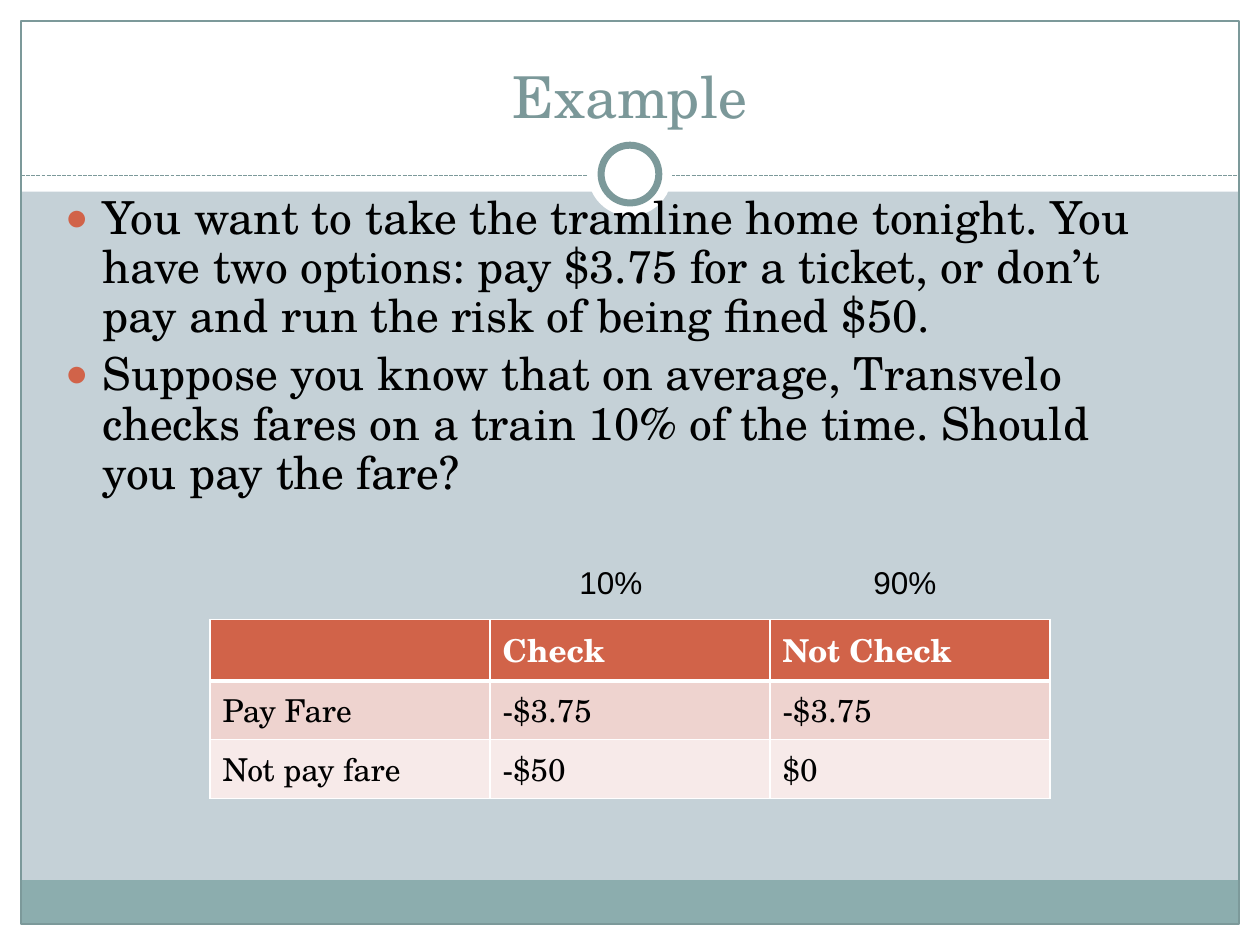
from lxml.etree import SubElement
from pptx import Presentation
from pptx.dml.color import RGBColor
from pptx.enum.dml import MSO_LINE
from pptx.enum.shapes import MSO_CONNECTOR, MSO_SHAPE
from pptx.enum.text import MSO_ANCHOR, MSO_AUTO_SIZE, PP_ALIGN
from pptx.oxml.ns import qn
from pptx.util import Pt

COLORS = {
    "background": "C5D1D7", "white": "FFFFFF", "black": "000000",
    "footer": "8CADAE", "frame": "7C999A", "title": "7B9899",
    "accent": "D16349", "band": "EED3CF", "light_band": "F7EAE9",
}
SERIF, SANS = "TeX Gyre Schola", "Arial"
WIDTH, HEIGHT, MARGIN = 720, 540, 12

BULLETS = [
    "You want to take the tramline home tonight. You have two options: "
    "pay $3.75 for a ticket, or don’t pay and run the risk of being fined $50.",
    "Suppose you know that on average, Transvelo checks fares on a train "
    "10% of the time. Should you pay the fare?",
]
PAYOFFS = [
    ["", "Check", "Not Check"],
    ["Pay Fare", "-$3.75", "-$3.75"],
    ["Not pay fare", "-$50", "$0"],
]


def color(name):
    return RGBColor.from_string(COLORS[name])


def write(paragraph, text, size=18, font=SERIF, ink="black", bold=False, align=None):
    paragraph.alignment = align
    run = paragraph.add_run()
    run.text = text
    run.font.size, run.font.name, run.font.bold = Pt(size), font, bold
    run.font.color.rgb = color(ink)


def add_panel(slide, box, fill=None, line=None, weight=0.75, kind=MSO_SHAPE.RECTANGLE):
    shape = slide.shapes.add_shape(kind, *map(Pt, box))
    shape.shadow.inherit = False
    if fill:
        shape.fill.solid()
        shape.fill.fore_color.rgb = color(fill)
    else:
        shape.fill.background()
    if line:
        shape.line.color.rgb = color(line)
        shape.line.width = Pt(weight)
    else:
        shape.line.fill.background()


def add_backdrop(slide, header_height):
    slide.background.fill.solid()
    slide.background.fill.fore_color.rgb = color("background")

    # White margins and header, footer band, frame
    inner_width = WIDTH - 2 * MARGIN
    for box in [
        (0, HEIGHT - MARGIN, WIDTH, MARGIN),
        (0, 0, WIDTH, header_height),
        (0, 0, MARGIN, HEIGHT),
        (WIDTH - MARGIN, 0, MARGIN, HEIGHT),
    ]:
        add_panel(slide, box, fill="white")
    add_panel(slide, (MARGIN, 503, inner_width, 25), fill="footer")
    add_panel(slide, (MARGIN, MARGIN, inner_width, HEIGHT - 2 * MARGIN), line="frame")

    # Dashed divider with a ring at its centre
    divider = slide.shapes.add_connector(
        MSO_CONNECTOR.STRAIGHT, Pt(MARGIN), Pt(100.5), Pt(WIDTH - MARGIN), Pt(100.5))
    divider.line.color.rgb = color("frame")
    divider.line.width = Pt(0.75)
    divider.line.dash_style = MSO_LINE.SQUARE_DOT
    SubElement(divider._element.spPr, qn("a:effectLst"))
    for diameter, line in [(48, None), (33, "frame")]:
        box = (WIDTH / 2 - diameter / 2, 99.5 - diameter / 2, diameter, diameter)
        add_panel(slide, box, fill="white", line=line, weight=4, kind=MSO_SHAPE.OVAL)


def place_placeholder(slide, placeholder, box, anchor):
    """Bring the placeholder in front of the backdrop and fit it to the box."""
    slide.shapes._spTree.append(placeholder._element)
    placeholder.left, placeholder.top, placeholder.width, placeholder.height = map(Pt, box)
    frame = placeholder.text_frame
    frame.word_wrap = True
    frame.auto_size = MSO_AUTO_SIZE.NONE
    frame.vertical_anchor = anchor
    return frame


def add_title(slide, box, text):
    frame = place_placeholder(slide, slide.shapes.title, box, MSO_ANCHOR.BOTTOM)
    write(frame.paragraphs[0], text, size=33, ink="title", align=PP_ALIGN.CENTER)


def add_bullets(slide, box, items):
    frame = place_placeholder(slide, slide.placeholders[1], box, MSO_ANCHOR.TOP)
    for index, item in enumerate(items):
        paragraph = frame.add_paragraph() if index else frame.paragraphs[0]
        write(paragraph, item, size=26)
        paragraph.line_spacing = 0.9
        paragraph.space_before = Pt(5.2)
        properties = paragraph._p.get_or_add_pPr()
        properties.set("marL", str(Pt(21.6)))
        properties.set("indent", str(-Pt(21.6)))
        bullet_color = SubElement(properties, qn("a:buClr"))
        SubElement(bullet_color, qn("a:srgbClr"), val=COLORS["accent"])
        SubElement(properties, qn("a:buSzPct"), val="85000")
        SubElement(properties, qn("a:buChar"), char="●")


def set_borders(cell, top, bottom):
    properties = cell._tc.get_or_add_tcPr()
    for side, weight in [("L", 1), ("R", 1), ("T", top), ("B", bottom)]:
        line = SubElement(properties, qn(f"a:ln{side}"), w=str(Pt(weight)))
        fill = SubElement(line, qn("a:solidFill"))
        SubElement(fill, qn("a:srgbClr"), val=COLORS["white"])


def add_payoff_table(slide, box, rows):
    table = slide.shapes.add_table(len(rows), len(rows[0]), *map(Pt, box)).table
    fills = ["accent", "band", "light_band"]
    for row_index, row in enumerate(rows):
        header = row_index == 0
        for column_index, text in enumerate(row):
            cell = table.cell(row_index, column_index)
            set_borders(cell, top=3 if row_index == 1 else 1, bottom=3 if header else 1)
            cell.fill.solid()
            cell.fill.fore_color.rgb = color(fills[row_index])
            if text:
                write(cell.text_frame.paragraphs[0], text,
                      ink="white" if header else "black", bold=header)


def add_label(slide, box, text):
    frame = slide.shapes.add_textbox(*map(Pt, box)).text_frame
    frame.word_wrap = True
    frame.auto_size = MSO_AUTO_SIZE.SHAPE_TO_FIT_TEXT
    write(frame.paragraphs[0], text, font=SANS)


def main():
    presentation = Presentation()
    presentation.slide_width, presentation.slide_height = Pt(WIDTH), Pt(HEIGHT)
    slide = presentation.slides.add_slide(presentation.slide_layouts[1])

    add_backdrop(slide, header_height=109.5)
    add_title(slide, (24, 18, 672, 60), "Example")
    add_bullets(slide, (30, 108, 648, 198), BULLETS)
    add_payoff_table(slide, (120, 354, 480, 87.6), PAYOFFS)

    # Probabilities above the table columns
    add_label(slide, (324, 318, 66, 29), "10%")
    add_label(slide, (492, 318, 90, 29), "90%")

    presentation.save("out.pptx")


if __name__ == "__main__":
    main()
